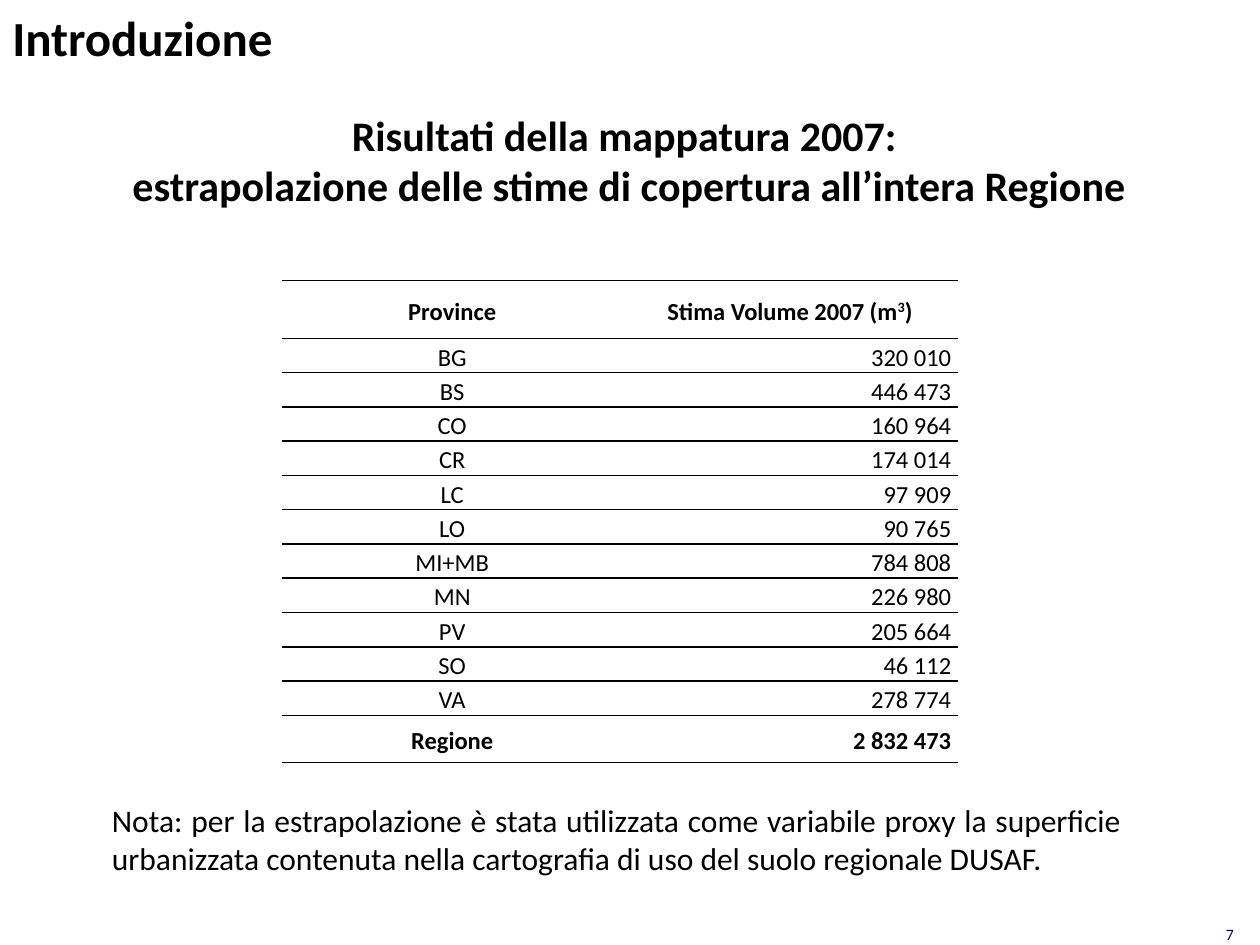
from lxml.etree import SubElement
from pptx import Presentation
from pptx.dml.color import RGBColor
from pptx.enum.text import MSO_ANCHOR, PP_ALIGN
from pptx.oxml.ns import qn
from pptx.util import Pt

FONT = "Calibri"
BLACK, NAVY = "000000", "000066"
LEFT, MID = PP_ALIGN.LEFT, PP_ALIGN.CENTER
RIGHT, FULL = PP_ALIGN.RIGHT, PP_ALIGN.JUSTIFY

# lines, (left, top, width, height), size, bold, colour, align, anchor
TEXTS = [
    (["Introduzione"], (0, -0.7, 592.6, 44), 28, True, BLACK, LEFT,
     MSO_ANCHOR.MIDDLE),
    (["Risultati della mappatura 2007:",
      " estrapolazione delle stime di copertura all’intera Regione"],
     (0, 59, 713.5, 65.5), 24, True, BLACK, MID, MSO_ANCHOR.TOP),
    (["Nota: per la estrapolazione è stata utilizzata come variabile proxy "
      "la superficie urbanizzata contenuta nella cartografia di uso del "
      "suolo regionale DUSAF."],
     (56.9, 454.3, 591, 51), 18, False, BLACK, FULL, MSO_ANCHOR.TOP),
    (["7"], (648.7, 524.9, 63.4, 15.1), 9, False, NAVY, RIGHT,
     MSO_ANCHOR.TOP),
]

HEAD = ("Province", ("Stima Volume 2007 (m", "3", ")"))
VOLUMES = [
    ("BG", "320 010"),
    ("BS", "446 473"),
    ("CO", "160 964"),
    ("CR", "174 014"),
    ("LC", "97 909"),
    ("LO", "90 765"),
    ("MI+MB", "784 808"),
    ("MN", "226 980"),
    ("PV", "205 664"),
    ("SO", "46 112"),
    ("VA", "278 774"),
]
TOTAL = ("Regione", "2 832 473")
COLS = (194.4, 191.6)
HEAD_H, ROW_H, TOTAL_H = 33, 19.6, 27


def color(code):
    return RGBColor.from_string(code)


def style(para, size, bold, code, align):
    para.alignment = align
    font = para.font
    font.name, font.size, font.bold = FONT, Pt(size), bold
    font.color.rgb = color(code)


def add_text(slide, lines, box, size, bold, code, align, anchor):
    frame = slide.shapes.add_textbox(*map(Pt, box)).text_frame
    frame.word_wrap = True
    frame.vertical_anchor = anchor
    frame.text = "\n".join(lines)
    for para in frame.paragraphs:
        style(para, size, bold, code, align)


def rule(cell):
    """Draw lines above and below the cell, and none at its sides."""
    props = cell._tc.get_or_add_tcPr()
    for tag in ("lnL", "lnR", "lnT", "lnB"):
        line = SubElement(props, qn("a:" + tag), w=str(Pt(1)))
        if tag in ("lnL", "lnR"):
            SubElement(line, qn("a:noFill"))
        else:
            fill = SubElement(line, qn("a:solidFill"))
            SubElement(fill, qn("a:srgbClr"), val=BLACK)


def fill_cell(cell, text, bold, align):
    rule(cell)
    cell.fill.background()
    cell.vertical_anchor = MSO_ANCHOR.MIDDLE
    cell.margin_left = cell.margin_right = Pt(3.6)
    cell.margin_top = cell.margin_bottom = 0
    para = cell.text_frame.paragraphs[0]
    parts = (text,) if isinstance(text, str) else text
    for i, part in enumerate(parts):
        run = para.add_run()
        run.text = part
        if i == 1:  # the exponent
            run.font._element.set("baseline", "30000")
    para.line_spacing = 1.15
    style(para, 14, bold, BLACK, align)


def add_volumes(slide):
    rows = [HEAD, *VOLUMES, TOTAL]
    tall = [HEAD_H] + [ROW_H] * len(VOLUMES) + [TOTAL_H]
    table = slide.shapes.add_table(
        len(rows), len(COLS), Pt(161.2), Pt(160.3),
        Pt(sum(COLS)), Pt(sum(tall))).table
    table.first_row = table.horz_banding = False
    for col, width in zip(table.columns, COLS):
        col.width = Pt(width)
    for r, (row, height) in enumerate(zip(rows, tall)):
        table.rows[r].height = Pt(height)
        for c, text in enumerate(row):
            align = RIGHT if r and c else MID
            fill_cell(table.cell(r, c), text, row in (HEAD, TOTAL), align)


def main():
    deck = Presentation()
    deck.slide_width, deck.slide_height = Pt(720), Pt(540)
    slide = deck.slides.add_slide(deck.slide_layouts[6])
    for item in TEXTS:
        add_text(slide, *item)
    add_volumes(slide)
    deck.save("out.pptx")


if __name__ == "__main__":
    main()
